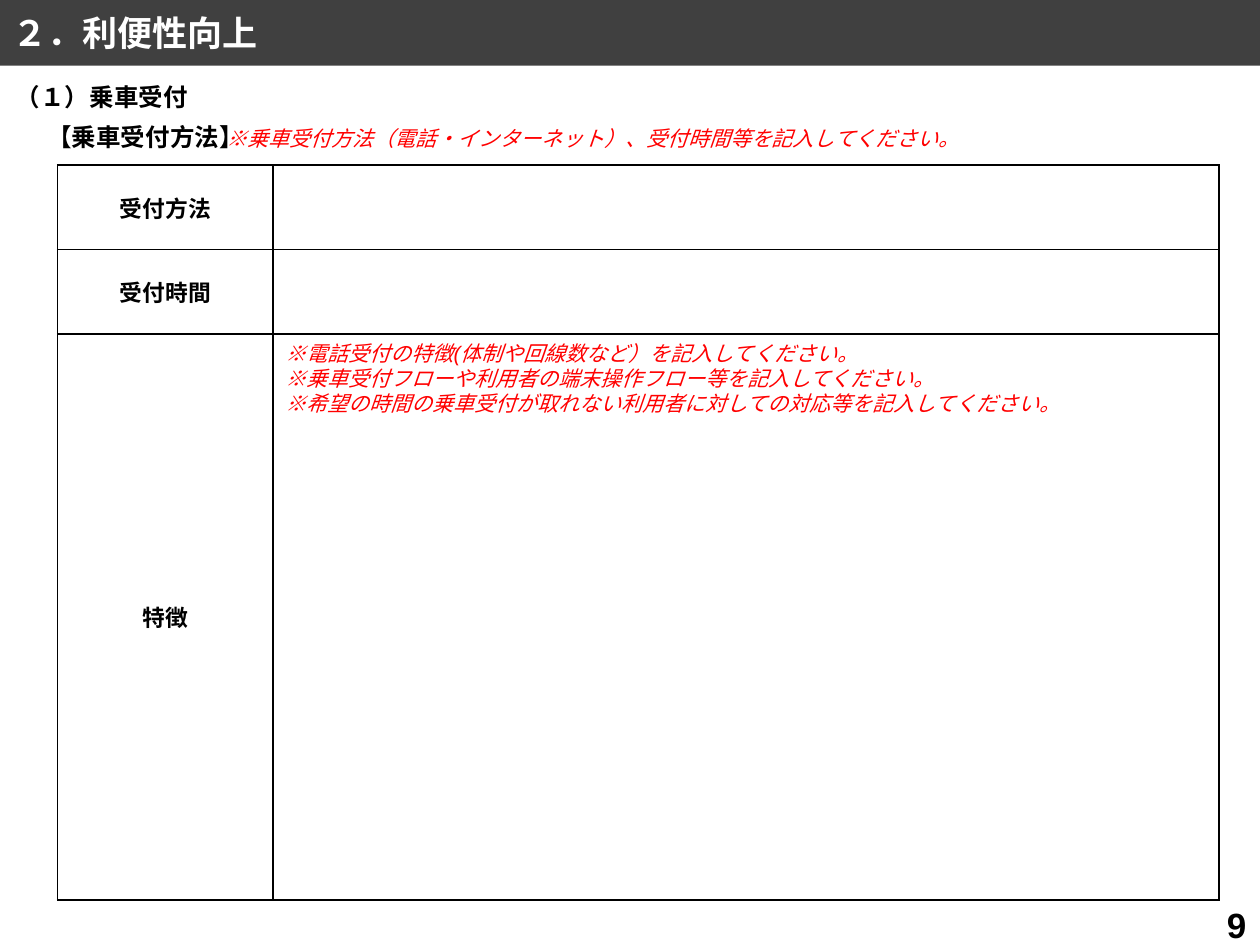
from pptx import Presentation
from pptx.dml.color import RGBColor as RGB
from pptx.enum.text import MSO_ANCHOR as Anchor, MSO_AUTO_SIZE as Auto, PP_ALIGN as Align
from pptx.oxml.ns import qn
from pptx.util import Pt
from lxml.etree import SubElement as Sub

BLACK, WHITE = RGB(0, 0, 0), RGB(255, 255, 255)
GRAY, RED = RGB(64, 64, 64), RGB(255, 0, 0)
SANS, ASIAN = "Arial", "Noto Sans CJK JP"

TITLE = "２．利便性向上"
LABELS = ["受付方法", "受付時間", "特徴"]
COLS = [123, 540.5]
ROWS = [48.2, 48.2, 323.4]
LEFT, TOP = 33, 94.4

HEAD = dict(name=SANS, size=Pt(14), bold=True, color=BLACK)
NOTE = dict(name=SANS, size=Pt(12), italic=True, color=RED)
CELL = dict(name=ASIAN, size=Pt(13), bold=True, color=BLACK)
BAR = dict(name=ASIAN, size=Pt(20), bold=True, color=WHITE)
PAGE = dict(name=SANS, size=Pt(20), bold=True, color=BLACK)

TEXTS = [
    ((20, 66.2, 407, 24.5), HEAD, Align.LEFT, ["【乗車受付方法】"]),
    ((122.4, 68.4, 574, 21.8), NOTE, Align.LEFT,
     ["※乗車受付方法（電話・インターネット）、受付時間等を記入してください。"]),
    ((2, 43.2, 407, 24.5), HEAD, Align.LEFT, ["（１）乗車受付"]),
    ((156.2, 190.8, 574, 51), NOTE, Align.LEFT,
     ["※電話受付の特徴(体制や回線数など）を記入してください。",
      "※乗車受付フローや利用者の端末操作フロー等を記入してください。",
      "※希望の時間の乗車受付が取れない利用者に対しての対応等を記入してください。"]),
    ((543.6, 512.6, 175.7, 27.4), PAGE, Align.RIGHT, ["9"]),
]


def write(frame, lines, style, align):
    for i, line in enumerate(lines):
        para = frame.add_paragraph() if i else frame.paragraphs[0]
        para.alignment = align
        run = para.add_run()
        run.text = line
        for key, val in style.items():
            if key == "color":
                run.font.color.rgb = val
            else:
                setattr(run.font, key, val)
        if style["name"] == ASIAN:
            Sub(run.font._element, qn("a:ea"), typeface=ASIAN)


def edge(cell):
    props = cell._tc.get_or_add_tcPr()
    for i, tag in enumerate(("a:lnL", "a:lnR", "a:lnT", "a:lnB")):
        line = props.makeelement(qn(tag), {"w": str(Pt(1))})
        fill = Sub(line, qn("a:solidFill"))
        Sub(fill, qn("a:srgbClr"), val=str(BLACK))
        props.insert(i, line)


deck = Presentation()
deck.slide_width, deck.slide_height = Pt(720), Pt(540)
slide = deck.slides.add_slide(deck.slide_layouts[5])
shapes = slide.shapes

bar = shapes.title
bar.left, bar.top, bar.width, bar.height = Pt(0), Pt(0), Pt(720), Pt(37.5)
bar.fill.solid()
bar.fill.fore_color.rgb = GRAY
bar.text_frame.auto_size = Auto.NONE
bar.text_frame.vertical_anchor = Anchor.MIDDLE
write(bar.text_frame, [TITLE], BAR, Align.LEFT)

grid = shapes.add_table(len(ROWS), len(COLS), Pt(LEFT), Pt(TOP),
                        Pt(sum(COLS)), Pt(sum(ROWS))).table
grid.first_row = grid.horz_banding = False
for col, wide in zip(grid.columns, COLS):
    col.width = Pt(wide)
for row, high, label in zip(grid.rows, ROWS, LABELS):
    row.height = Pt(high)
    for cell in row.cells:
        cell.fill.solid()
        cell.fill.fore_color.rgb = WHITE
        edge(cell)
    head = row.cells[0]
    head.vertical_anchor = Anchor.MIDDLE
    head.margin_left = head.margin_right = Pt(4.3)
    head.margin_top = head.margin_bottom = 0
    write(head.text_frame, [label], CELL, Align.CENTER)

for place, style, align, lines in TEXTS:
    frame = shapes.add_textbox(*map(Pt, place)).text_frame
    frame.word_wrap = True
    write(frame, lines, style, align)

deck.save("out.pptx")
